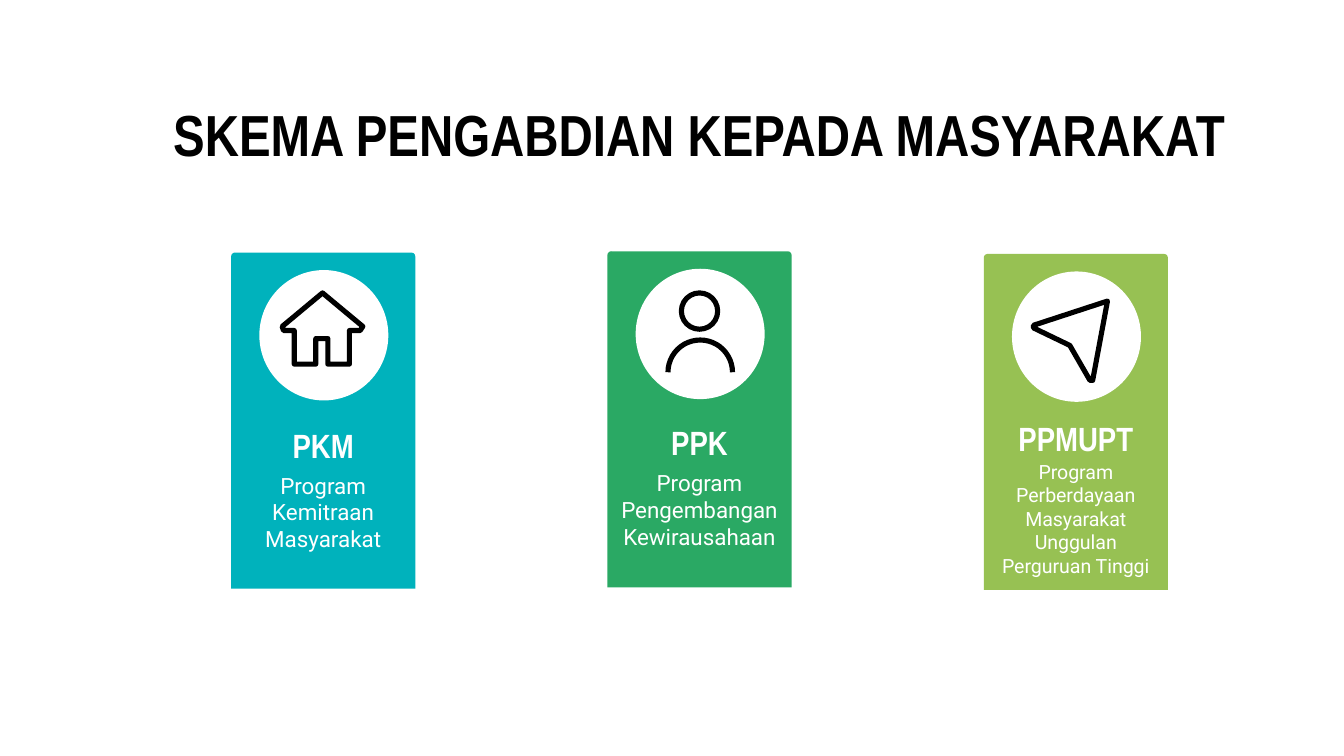
import pptx
import pptx.dml.color
import pptx.enum.shapes
import pptx.enum.text
import pptx.util
from lxml import etree
from pptx.util import Inches

SHAPES = pptx.enum.shapes.MSO_SHAPE
BLACK = "000000"
WHITE = "FFFFFF"
HEADING_FONT = "Arial Narrow"
BODY_FONT = "Roboto"

CARD_LEFT, CARD_PITCH = 1.72, 2.8
CARD_WIDTH, CARD_HEIGHT = 1.37, 2.5

CARDS = [
    ("00B2BC", 1.88, "PKM", 3.06, "Program Kemitraan Masyarakat", 3.41, 12),
    ("2AA964", 1.87, "PPK", 3.04, "Program Pengembangan Kewirausahaan", 3.39, 12),
    ("97C153", 1.89, "PPMUPT", 3.01,
     "Program Perberdayaan Masyarakat Unggulan Perguruan Tinggi", 3.32, 10.5),
]

HOUSE = [(2.4, 2.18), (2.7, 2.43), (2.68, 2.46), (2.6, 2.46), (2.6, 2.71),
         (2.44, 2.71), (2.44, 2.52), (2.35, 2.52), (2.35, 2.71), (2.19, 2.71),
         (2.19, 2.46), (2.11, 2.46), (2.1, 2.43)]
PAPER_PLANE = [(8.24, 2.24), (8.13, 2.83), (8.11, 2.83), (7.96, 2.57),
               (7.69, 2.44), (7.69, 2.42)]


def color(code):
    return pptx.dml.color.RGBColor.from_string(code)


def add_filled(slide, kind, left, top, width, height, fill):
    shape = slide.shapes.add_shape(
        kind, Inches(left), Inches(top), Inches(width), Inches(height))
    shape.shadow.inherit = False
    shape.fill.solid()
    shape.fill.fore_color.rgb = color(fill)
    shape.line.fill.background()
    return shape


def style_outline(shape):
    shape.shadow.inherit = False
    shape.fill.background()
    shape.line.color.rgb = color(BLACK)
    shape.line.width = pptx.util.Pt(2.75)
    line = shape.line._get_or_add_ln()
    etree.SubElement(line, pptx.oxml.ns.qn("a:round"))


def add_outline(slide, kind, left, top, width, height):
    shape = slide.shapes.add_shape(
        kind, Inches(left), Inches(top), Inches(width), Inches(height))
    style_outline(shape)
    return shape


def add_outline_path(slide, points):
    corners = [(Inches(x), Inches(y)) for x, y in points]
    builder = slide.shapes.build_freeform(*corners[0])
    builder.add_line_segments(corners[1:], close=True)
    style_outline(builder.convert_to_shape())


def add_text(slide, text, left, top, width, height, font, size, fill, bold=False):
    box = slide.shapes.add_textbox(
        Inches(left), Inches(top), Inches(width), Inches(height))
    frame = box.text_frame
    frame.word_wrap = True
    frame.margin_left = frame.margin_right = Inches(0.1)
    frame.margin_top = frame.margin_bottom = Inches(0.1)
    para = frame.paragraphs[0]
    para.text = text
    para.alignment = pptx.enum.text.PP_ALIGN.CENTER
    para.font.name = font
    para.font.size = pptx.util.Pt(size)
    para.font.bold = bold
    para.font.color.rgb = color(fill)
    return para


def add_card(slide, left, fill, top, heading, heading_top, body, body_top, body_size):
    panel = add_filled(slide, SHAPES.ROUND_2_SAME_RECTANGLE,
                       left, top, CARD_WIDTH, CARD_HEIGHT, fill)
    panel.adjustments[0] = 0.02
    add_filled(slide, SHAPES.OVAL, left + 0.21, top + 0.13, 0.96, 0.97, WHITE)
    add_text(slide, heading, left, heading_top, CARD_WIDTH, 0.39,
             HEADING_FONT, 18, WHITE, bold=True)
    add_text(slide, body, left, body_top, CARD_WIDTH, 0.67,
             BODY_FONT, body_size, WHITE)


def add_person(slide):
    add_outline(slide, SHAPES.OVAL, 5.07, 2.18, 0.27, 0.27)
    shoulders = add_outline(slide, SHAPES.ARC, 4.97, 2.53, 0.48, 0.48)
    shoulders.adjustments[0] = 108
    shoulders.adjustments[1] = 0


def main():
    deck = pptx.Presentation()
    deck.slide_width = Inches(10)
    deck.slide_height = deck.slide_width * 9 // 16
    slide = deck.slides.add_slide(deck.slide_layouts[6])

    title = add_text(slide, "SKEMA PENGABDIAN KEPADA MASYARAKAT",
                     0.7, 0.69, 9, 0.66, HEADING_FONT, 31, BLACK, bold=True)
    title.line_spacing = 0.9

    for index, card in enumerate(CARDS):
        add_card(slide, CARD_LEFT + index * CARD_PITCH, *card)

    add_outline_path(slide, HOUSE)
    add_person(slide)
    add_outline_path(slide, PAPER_PLANE)
    deck.save("out.pptx")


if __name__ == "__main__":
    main()
